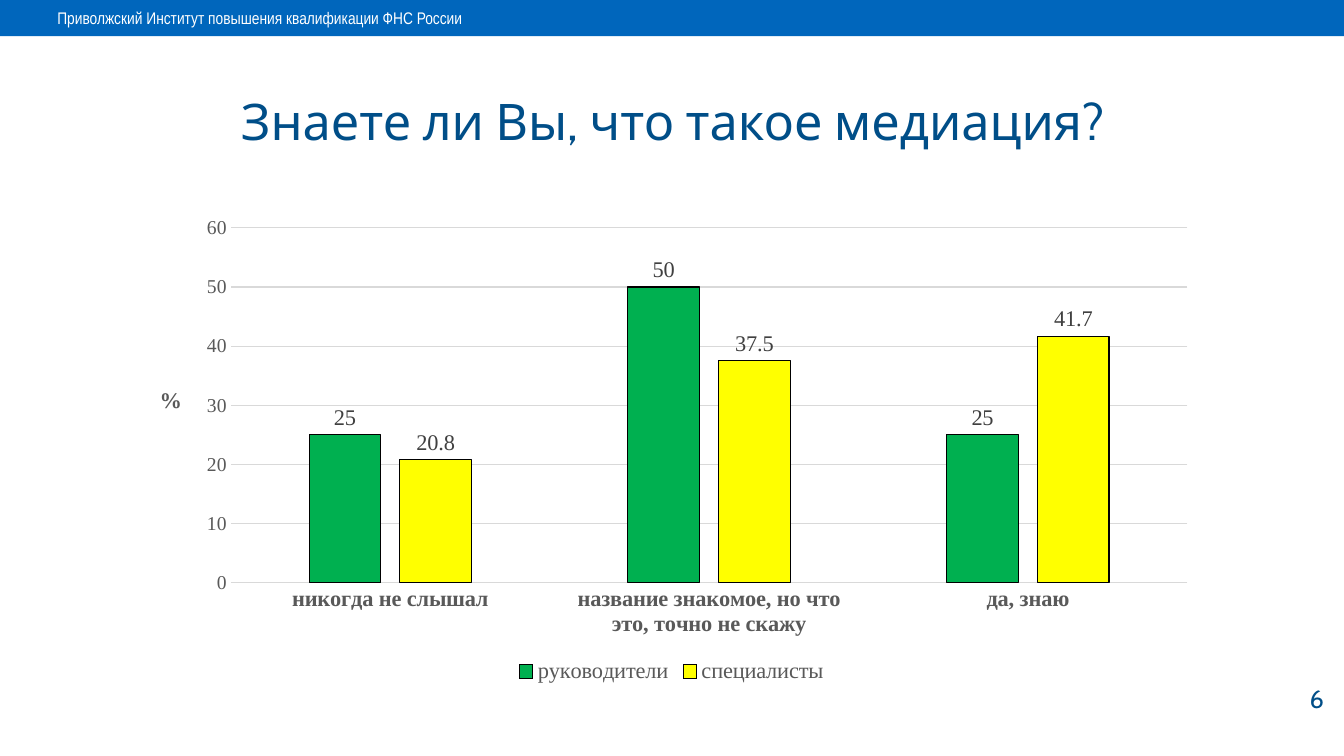
from dataclasses import dataclass

from lxml import etree
from pptx import Presentation
from pptx.chart.data import CategoryChartData
from pptx.dml.color import RGBColor
from pptx.enum.chart import XL_CHART_TYPE, XL_LABEL_POSITION, XL_LEGEND_POSITION, XL_TICK_MARK
from pptx.enum.shapes import MSO_SHAPE
from pptx.enum.text import MSO_ANCHOR, PP_ALIGN
from pptx.oxml.ns import qn
from pptx.util import Emu, Pt

EMU_PER_PX = 9144
TITLE_ONLY = 5

WHITE = RGBColor(0xFF, 0xFF, 0xFF)
BLACK = RGBColor(0x00, 0x00, 0x00)
BAND_BLUE = RGBColor(0x00, 0x66, 0xBC)
DARK_BLUE = RGBColor(0x00, 0x4E, 0x88)
GREEN = RGBColor(0x00, 0xB0, 0x50)
YELLOW = RGBColor(0xFF, 0xFF, 0x00)
LABEL_GRAY = RGBColor(0x40, 0x40, 0x40)
AXIS_GRAY = RGBColor(0x59, 0x59, 0x59)
GRID_GRAY = RGBColor(0xD9, 0xD9, 0xD9)

CHART_FONT = "Times New Roman"
LEFT, CENTER, RIGHT = PP_ALIGN.LEFT, PP_ALIGN.CENTER, PP_ALIGN.RIGHT
MIDDLE = MSO_ANCHOR.MIDDLE
RECTANGLE = MSO_SHAPE.RECTANGLE
CLUSTERED = XL_CHART_TYPE.COLUMN_CLUSTERED
OUTSIDE_END = XL_LABEL_POSITION.OUTSIDE_END
BOTTOM = XL_LEGEND_POSITION.BOTTOM
NO_TICK = XL_TICK_MARK.NONE


@dataclass(frozen=True)
class Box:
    left: int
    top: int
    width: int
    height: int

    def emu(self) -> tuple:
        sides = (self.left, self.top, self.width, self.height)
        return tuple(Emu(side * EMU_PER_PX) for side in sides)


@dataclass(frozen=True)
class Caption:
    text: str
    box: Box
    size: int
    font: str
    color: RGBColor
    align: PP_ALIGN


@dataclass(frozen=True)
class Series:
    name: str
    values: tuple
    color: RGBColor


HEADER_BAND = Box(0, 0, 1333, 36)
CHART_BOX = Box(133, 207, 1066, 476)
TITLE = Caption("Знаете ли Вы, что такое медиация?", Box(27, 76, 1281, 87),
                36, "Cabin", DARK_BLUE, CENTER)
CAPTIONS = (
    Caption("Приволжский Институт повышения квалификации ФНС России",
            Box(47, 3, 1218, 30), 12, "Arial Narrow", WHITE, LEFT),
    Caption("6", Box(1234, 673, 89, 40), 18, "Cabin", DARK_BLUE, RIGHT),
)
CATEGORIES = ("никогда не слышал", "название знакомое, но что это, точно не скажу", "да, знаю")
SERIES = (
    Series("руководители", (25, 50, 25), GREEN),
    Series("специалисты", (20.8, 37.5, 41.7), YELLOW),
)


def set_font(font, name: str, size: int, color: RGBColor, bold: bool = False) -> None:
    font.name = name
    font.size = Pt(size)
    font.bold = bold
    font.color.rgb = color


def set_line(line, color: RGBColor) -> None:
    line.color.rgb = color
    line.width = Pt(0.75)


def fill_caption(shape, caption: Caption) -> None:
    shape.left, shape.top, shape.width, shape.height = caption.box.emu()
    shape.text_frame.word_wrap = True
    paragraph = shape.text_frame.paragraphs[0]
    paragraph.text = caption.text
    paragraph.alignment = caption.align
    set_font(paragraph.font, caption.font, caption.size, caption.color)


def add_header_band(slide) -> None:
    band = slide.shapes.add_shape(RECTANGLE, *HEADER_BAND.emu())
    band.shadow.inherit = False
    band.fill.solid()
    band.fill.fore_color.rgb = BAND_BLUE
    band.line.fill.background()


def set_layout(parent, index: int, **settings) -> None:
    layout = parent.find(qn("c:layout"))
    if layout is not None:
        parent.remove(layout)
    layout = etree.Element(qn("c:layout"))
    manual = etree.SubElement(layout, qn("c:manualLayout"))
    for name, value in settings.items():
        etree.SubElement(manual, qn(f"c:{name}")).set("val", str(value))
    parent.insert(index, layout)


def format_axes(chart) -> None:
    category_axis, value_axis = chart.category_axis, chart.value_axis
    for axis in (category_axis, value_axis):
        axis.major_tick_mark = NO_TICK
        axis.minor_tick_mark = NO_TICK
    set_font(category_axis.tick_labels.font, CHART_FONT, 16, AXIS_GRAY, True)
    set_line(category_axis.format.line, GRID_GRAY)

    value_axis.minimum_scale = 0
    value_axis.maximum_scale = 60
    value_axis.major_unit = 10
    set_font(value_axis.tick_labels.font, CHART_FONT, 14, AXIS_GRAY)
    value_axis.format.line.fill.background()
    set_line(value_axis.major_gridlines.format.line, GRID_GRAY)

    title_frame = value_axis.axis_title.text_frame
    paragraph = title_frame.paragraphs[0]
    paragraph.text = "%"
    set_font(paragraph.font, CHART_FONT, 16, AXIS_GRAY, True)
    body = title_frame._txBody.find(qn("a:bodyPr"))
    body.set("rot", "0")
    body.set("vert", "horz")
    set_layout(value_axis.axis_title._element, 1, xMode="edge", yMode="edge", x=0.02, y=0.36)


def add_survey_chart(slide) -> None:
    data = CategoryChartData(number_format="General")
    data.categories = CATEGORIES
    for series in SERIES:
        data.add_series(series.name, series.values)
    chart = slide.shapes.add_chart(CLUSTERED, *CHART_BOX.emu(), data).chart
    set_font(chart.font, CHART_FONT, 10, BLACK)
    chart.has_title = False
    chart.has_legend = True
    chart.legend.position = BOTTOM
    chart.legend.include_in_layout = False
    set_font(chart.legend.font, CHART_FONT, 16, AXIS_GRAY)
    format_axes(chart)

    plot = chart.plots[0]
    plot.gap_width = 219
    plot.overlap = -27
    plot.vary_by_categories = False
    for series, drawn in zip(SERIES, plot.series):
        drawn.format.fill.solid()
        drawn.format.fill.fore_color.rgb = series.color
        set_line(drawn.format.line, BLACK)
        labels = drawn.data_labels
        labels.show_value = True
        labels.position = OUTSIDE_END
        set_font(labels.font, CHART_FONT, 16, LABEL_GRAY)

    plot_area = chart._chartSpace.find(f"{qn('c:chart')}/{qn('c:plotArea')}")
    set_layout(plot_area, 0, layoutTarget="inner", xMode="edge", yMode="edge",
               x=0.09, y=0.04, w=0.89, h=0.74)


def main() -> None:
    presentation = Presentation()
    presentation.slide_width = Emu(1333 * EMU_PER_PX)
    presentation.slide_height = Emu(750 * EMU_PER_PX)
    slide = presentation.slides.add_slide(presentation.slide_layouts[TITLE_ONLY])
    add_header_band(slide)
    fill_caption(slide.shapes.title, TITLE)
    slide.shapes.title.text_frame.vertical_anchor = MIDDLE
    for caption in CAPTIONS:
        fill_caption(slide.shapes.add_textbox(*caption.box.emu()), caption)
    add_survey_chart(slide)
    presentation.save("out.pptx")


if __name__ == "__main__":
    main()
